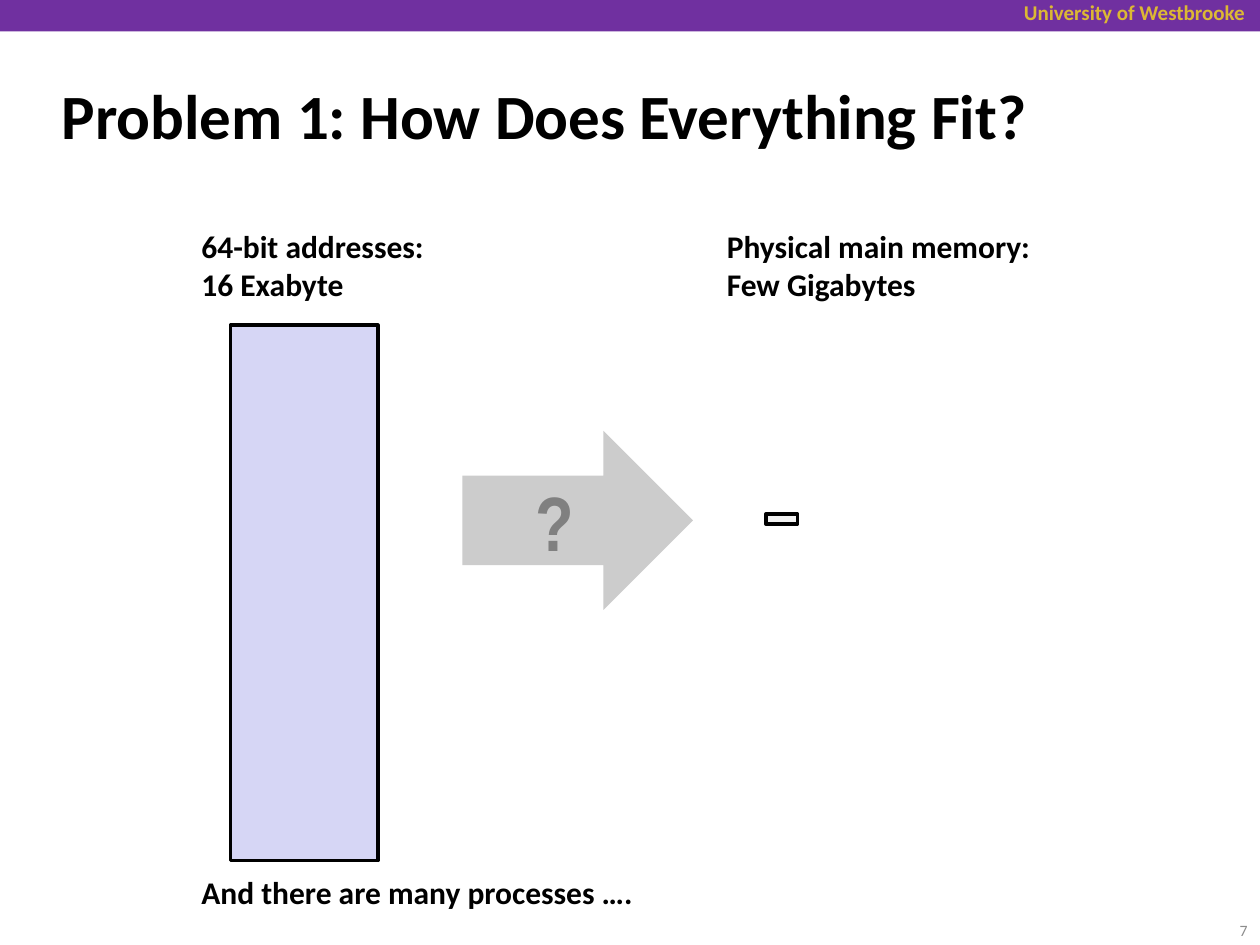
import pptx
import pptx.util
import pptx.dml.color
import pptx.enum.shapes
import pptx.enum.text

Inches = pptx.util.Inches
RGBColor = pptx.dml.color.RGBColor
SHAPES = pptx.enum.shapes.MSO_SHAPE
ALIGN = pptx.enum.text.PP_ALIGN
ANCHOR = pptx.enum.text.MSO_ANCHOR

PURPLE = RGBColor(0x70, 0x30, 0xA0)
GOLD = RGBColor(0xDC, 0xB8, 0x34)
BLACK = RGBColor(0x00, 0x00, 0x00)
LAVENDER = RGBColor(0xD6, 0xD6, 0xF5)
PALE_GRAY = RGBColor(0xF2, 0xF2, 0xF2)
ARROW_GRAY = RGBColor(0xCC, 0xCC, 0xCC)
MARK_GRAY = RGBColor(0x80, 0x80, 0x80)
NUMBER_GRAY = RGBColor(0x8C, 0x8C, 0x8C)

LABEL_LEFT = 1.5
LABEL_TOP = 1.75


def write_lines(shape, lines, size, color=BLACK, bold=True, font="Calibri",
                align=ALIGN.LEFT, anchor=ANCHOR.TOP, wrap=True):
    """Write one paragraph per line, all in the same format."""
    frame = shape.text_frame
    frame.word_wrap = wrap
    frame.vertical_anchor = anchor
    for index, line in enumerate(lines):
        paragraph = frame.add_paragraph() if index else frame.paragraphs[0]
        paragraph.alignment = align
        run = paragraph.add_run()
        run.text = line
        run.font.name = font
        run.font.size = pptx.util.Pt(size)
        run.font.bold = bold
        run.font.color.rgb = color


def add_text(slide, box, lines, size, **style):
    shape = slide.shapes.add_textbox(*map(Inches, box))
    write_lines(shape, lines, size, **style)


def add_block(slide, kind, box, fill, outlined=False):
    shape = slide.shapes.add_shape(kind, *map(Inches, box))
    shape.shadow.inherit = False
    shape.fill.solid()
    shape.fill.fore_color.rgb = fill
    if outlined:
        shape.line.color.rgb = BLACK
        shape.line.width = pptx.util.Pt(2)
    else:
        shape.line.fill.background()
    return shape


def set_title(slide, box, text):
    title = slide.shapes.title
    title.left, title.top, title.width, title.height = map(Inches, box)
    write_lines(title, [text], 36, anchor=ANCHOR.MIDDLE)


def main():
    presentation = pptx.Presentation()
    presentation.slide_width = Inches(10)
    presentation.slide_height = Inches(7.5)
    slide = presentation.slides.add_slide(presentation.slide_layouts[5])

    # Header band and title
    add_block(slide, SHAPES.RECTANGLE, (0, 0, 10, 0.25), PURPLE)
    add_text(slide, (7.33, -0.05, 2.65, 0.3), ["University of Westbrooke"], 12,
             color=GOLD, align=ALIGN.RIGHT)
    set_title(slide, (0.39, 0.49, 9.19, 0.83),
              "Problem 1: How Does Everything Fit?")

    # Labels
    add_text(slide, (LABEL_LEFT, LABEL_TOP, 1.98, 0.71),
             ["64-bit addresses:", "16 Exabyte"], 18, wrap=False)
    add_text(slide, (5.67, LABEL_TOP, 2.63, 0.71),
             ["Physical main memory:", "Few Gigabytes"], 18, wrap=False)
    add_text(slide, (LABEL_LEFT, 6.88, 3.65, 0.4),
             ["And there are many processes …."], 18, wrap=False)

    # Address space, physical memory and the arrow between them
    add_block(slide, SHAPES.RECTANGLE, (1.83, 2.58, 1.17, 4.25), LAVENDER,
              outlined=True)
    add_block(slide, SHAPES.RECTANGLE, (6.08, 4.08, 0.25, 0.08), PALE_GRAY,
              outlined=True)
    arrow = add_block(slide, SHAPES.RIGHT_ARROW, (3.67, 3.42, 1.83, 1.42),
                      ARROW_GRAY)
    write_lines(arrow, ["?"], 44, color=MARK_GRAY, font="Arial Narrow",
                align=ALIGN.CENTER, anchor=ANCHOR.MIDDLE)

    # Slide number
    add_text(slide, (9.33, 7.18, 0.67, 0.4), ["7"], 9, color=NUMBER_GRAY,
             bold=False, align=ALIGN.RIGHT, anchor=ANCHOR.MIDDLE)

    presentation.save("out.pptx")


if __name__ == "__main__":
    main()
